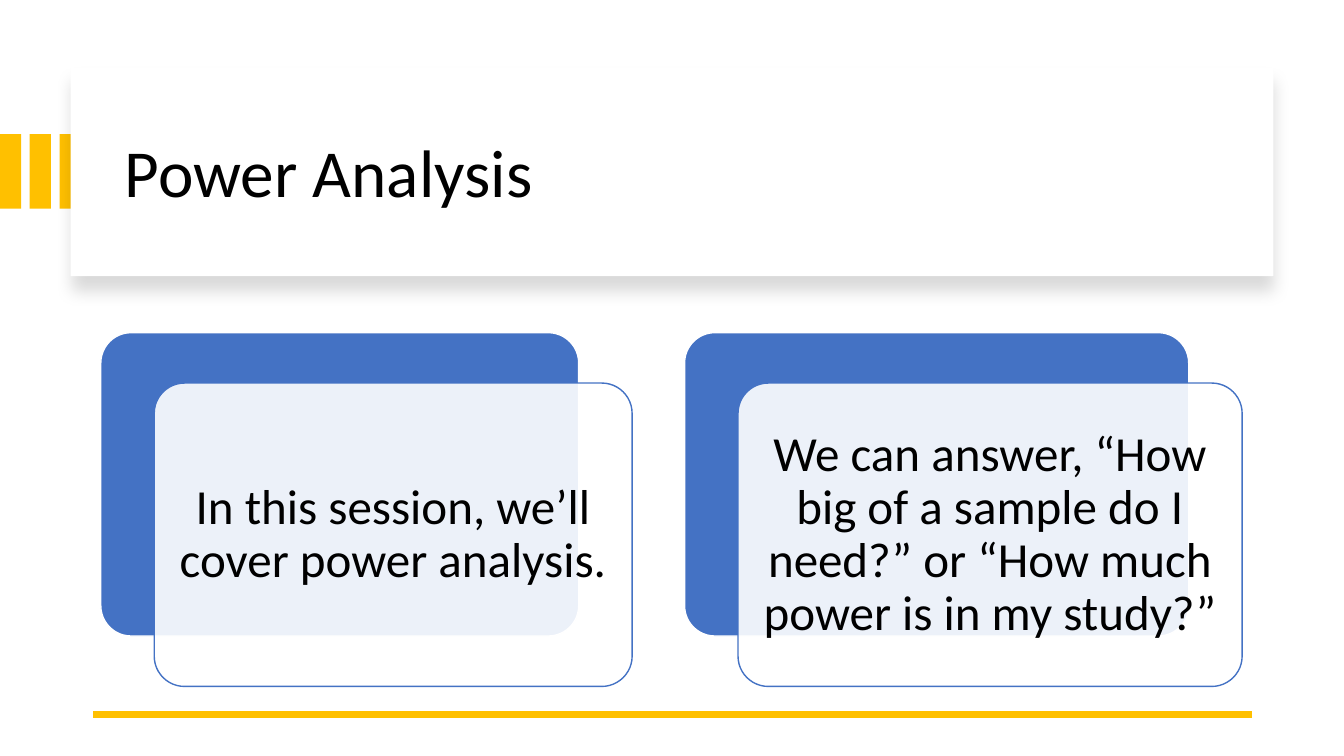
from dataclasses import dataclass

import lxml.etree
import pptx
import pptx.dml.color
import pptx.enum.shapes
import pptx.enum.text
import pptx.oxml
import pptx.oxml.ns
import pptx.util

Inches = pptx.util.Inches
Pt = pptx.util.Pt
Shape = pptx.enum.shapes.MSO_SHAPE
Align = pptx.enum.text.PP_ALIGN
qn = pptx.oxml.ns.qn


@dataclass(frozen=True)
class Theme:
    font: str = "Calibri"
    ink: str = "000000"
    paper: str = "FFFFFF"
    gold: str = "FFC000"
    blue: str = "4472C4"
    title_size: float = 48
    card_size: float = 35
    outline: float = 1
    rule: float = 4.5


THEME = Theme()


def rgb(value):
    return pptx.dml.color.RGBColor.from_string(value)


def add_box(slide, box, fill, line=None, kind=Shape.RECTANGLE):
    shape = slide.shapes.add_shape(kind, *map(Inches, box))
    shape.shadow.inherit = False
    shape.fill.solid()
    shape.fill.fore_color.rgb = rgb(fill)
    if line:
        shape.line.color.rgb = rgb(line)
        shape.line.width = Pt(THEME.outline)
    else:
        shape.line.fill.background()
    return shape


def write_text(shape, text, size, align=Align.LEFT, inset=None):
    frame = shape.text_frame
    frame.word_wrap = True
    frame.vertical_anchor = pptx.enum.text.MSO_ANCHOR.MIDDLE
    if inset is not None:
        frame.margin_left = frame.margin_right = Inches(inset)
        frame.margin_top = frame.margin_bottom = Inches(inset)
    paragraph = frame.paragraphs[0]
    paragraph.alignment = align
    paragraph.line_spacing = 0.9
    run = paragraph.add_run()
    run.text = text
    run.font.name = THEME.font
    run.font.size = Pt(size)
    run.font.color.rgb = rgb(THEME.ink)


def set_alpha(color, percent):
    lxml.etree.SubElement(color, qn("a:alpha"), val=str(percent * 1000))


def cast_shadow(shape, alpha, blur, distance, angle):
    effects = shape._element.spPr.find(qn("a:effectLst"))
    shadow = lxml.etree.SubElement(
        effects, qn("a:outerShdw"), blurRad=str(Pt(blur)),
        dist=str(Pt(distance)), dir=str(angle * 60000),
        algn="t", rotWithShape="0")
    color = lxml.etree.SubElement(shadow, qn("a:srgbClr"), val=THEME.ink)
    set_alpha(color, alpha)


def add_title_banner(slide, box, title):
    left, top, width, height = box
    for stripe in range(3):
        add_box(slide, (stripe * 0.295, top + 0.66, 0.21, 0.74), THEME.gold)
    banner = add_box(slide, box, THEME.paper)
    cast_shadow(banner, alpha=15, blur=11, distance=10, angle=90)
    heading = slide.shapes.add_textbox(
        *map(Inches, (left + 0.44, top + 0.22, width - 0.8, height - 0.37)))
    write_text(heading, title, THEME.title_size)


def add_layered_card(slide, box, text):
    """Place a blue panel with an offset translucent card that holds the text."""
    left, top, width, height = box
    panel = add_box(slide, box, THEME.blue, THEME.paper,
                    Shape.ROUNDED_RECTANGLE)
    card = add_box(slide, (left + 0.53, top + 0.5, width, height),
                   THEME.paper, THEME.blue, Shape.ROUNDED_RECTANGLE)
    for layer in (panel, card):
        layer.adjustments[0] = 0.1
    set_alpha(card._element.spPr.find(qn("a:solidFill"))[0], 90)
    write_text(card, text, THEME.card_size, align=Align.CENTER, inset=0.15)


def add_footer_rule(slide, left, right, top):
    rule = slide.shapes.add_connector(
        pptx.enum.shapes.MSO_CONNECTOR.STRAIGHT,
        Inches(right), Inches(top), Inches(left), Inches(top))
    rule.line.color.rgb = rgb(THEME.gold)
    rule.line.width = Pt(THEME.rule)
    lxml.etree.SubElement(rule._element.spPr, qn("a:effectLst"))


def main():
    deck = pptx.Presentation()
    deck.slide_width, deck.slide_height = Inches(13.33), Inches(7.5)
    slide = deck.slides.add_slide(deck.slide_layouts[6])
    add_title_banner(slide, (0.7, 0.67, 11.93, 2.07), "Power Analysis")
    add_footer_rule(slide, 0.92, 12.42, 7.09)
    cards = [
        (1, 4.74, "In this session, we’ll cover power analysis."),
        (6.79, 5, "We can answer, “How big of a sample do I need?” "
                  "or “How much power is in my study?”"),
    ]
    for left, width, text in cards:
        add_layered_card(slide, (left, 3.3, width, 3.01), text)
    deck.save("out.pptx")


if __name__ == "__main__":
    main()
